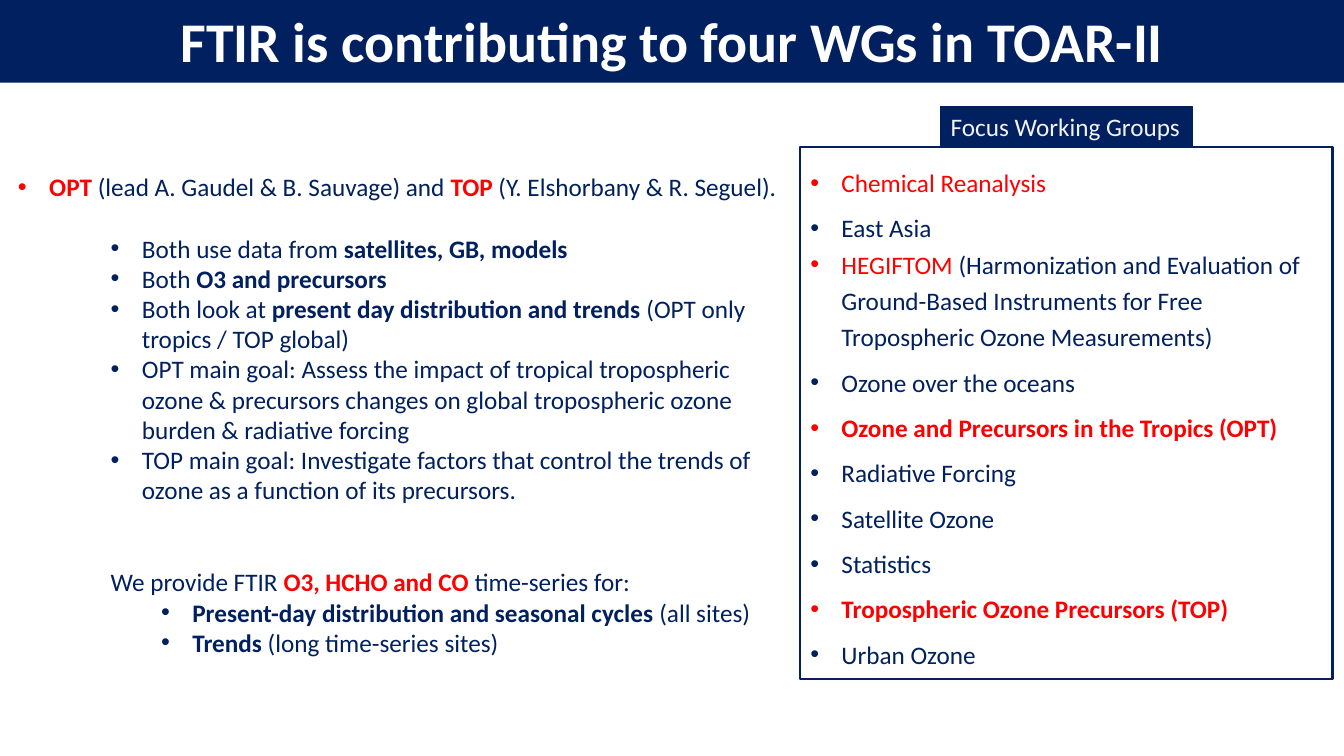
import pptx
import pptx.util
import pptx.dml.color
import pptx.enum.shapes
import pptx.enum.text
import lxml.etree

COLORS = {"navy": "002060", "red": "FF0000", "white": "FFFFFF", "pale": "F2F2F2"}
W, H = pptx.util.Inches(13.33), pptx.util.Inches(7.5)
LINE = 22  # height in points of one 18 pt text line

prs = pptx.Presentation()
prs.slide_width, prs.slide_height = W, H
s = prs.slides.add_slide(prs.slide_layouts[6])


def add_box(left, top, width, height, fill=None, line=0):
    """Add a rectangle placed in percent of the slide; line is in points."""
    sp = s.shapes.add_shape(
        pptx.enum.shapes.MSO_SHAPE.RECTANGLE,
        int(W * left / 100), int(H * top / 100),
        int(W * width / 100), int(H * height / 100))
    sp.shadow.inherit = False
    sp.fill.solid()
    sp.fill.fore_color.rgb = pptx.dml.color.RGBColor.from_string(COLORS[fill])
    if line:
        sp.line.color.rgb = pptx.dml.color.RGBColor.from_string(COLORS["navy"])
        sp.line.width = pptx.util.Pt(line)
    else:
        sp.line.fill.background()
    sp.text_frame.vertical_anchor = pptx.enum.text.MSO_ANCHOR.TOP
    return sp.text_frame


def add_par(tf, runs, size=18, indent=None, bullet=True, spacing=1.0, before=0):
    """Add a paragraph of (text, colour, bold) runs; indent is in inches."""
    p = tf.paragraphs[0] if not tf.paragraphs[0].runs else tf.add_paragraph()
    p.alignment = pptx.enum.text.PP_ALIGN.LEFT
    p.line_spacing = spacing
    p.space_before = pptx.util.Pt(before)
    if indent is not None:
        pPr = p._p.get_or_add_pPr()
        pPr.set("marL", str(pptx.util.Inches(indent)))
        pPr.set("indent", str(pptx.util.Inches(-0.31 if bullet else 0)))
        if bullet:
            ns = pptx.oxml.ns.qn
            lxml.etree.SubElement(pPr, ns("a:buFont")).set("typeface", "Arial")
            lxml.etree.SubElement(pPr, ns("a:buChar")).set("char", "•")
    for text, color, bold in runs:
        r = p.add_run()
        r.text = text
        r.font.name = "Calibri"
        r.font.size = pptx.util.Pt(size)
        r.font.bold = bold
        r.font.color.rgb = pptx.dml.color.RGBColor.from_string(COLORS[color])
    return p


# Title bar
tf = add_box(0, -0.4, 100, 11.33, "navy")
tf.vertical_anchor = pptx.enum.text.MSO_ANCHOR.MIDDLE
p = add_par(tf, [("FTIR is contributing to four WGs in TOAR-II", "white", True)], size=40)
p.alignment = pptx.enum.text.PP_ALIGN.CENTER

# Label on top of the working group panel
tf = add_box(70, 14.13, 18.75, 5.33, "navy", line=0.75)
tf.word_wrap = False
add_par(tf, [("Focus Working Groups", "pale", False)])

# Working group panel
tf = add_box(59.55, 19.47, 39.6, 70.4, "white", line=1.5)
tf.word_wrap = True
groups = [
    [("Chemical Reanalysis", "red", False)],
    [("East Asia", "navy", False)],
    [("HEGIFTOM ", "red", False),
     ("(Harmonization and Evaluation of Ground-Based Instruments for Free "
      "Tropospheric Ozone Measurements)", "navy", False)],
    [("Ozone over the oceans", "navy", False)],
    [("Ozone and Precursors in the Tropics (OPT)", "red", True)],
    [("Radiative Forcing", "navy", False)],
    [("Satellite Ozone", "navy", False)],
    [("Statistics", "navy", False)],
    [("Tropospheric Ozone Precursors (TOP)", "red", True)],
    [("Urban Ozone", "navy", False)],
]
for runs in groups:
    add_par(tf, runs, indent=0.31, spacing=1.2 if len(runs) > 1 else 1.5)

# Details on the left: indent, bullet, blank lines above, runs
tf = s.shapes.add_textbox(0, int(H * 0.2207), int(W * 0.59), int(H * 0.74)).text_frame
tf.word_wrap = True
details = [
    (0.39, True, 0, [("OPT", "red", True),
                     (" (lead A. Gaudel & B. Sauvage) and ", "navy", False),
                     ("TOP", "red", True),
                     (" (Y. Elshorbany & R. Seguel).", "navy", False)]),
    (1.31, True, 1, [("Both use data from ", "navy", False),
                     ("satellites, GB, models", "navy", True)]),
    (1.31, True, 0, [("Both ", "navy", False), ("O3 and precursors", "navy", True)]),
    (1.31, True, 0, [("Both look at ", "navy", False),
                     ("present day distribution and trends ", "navy", True),
                     ("(OPT only tropics / TOP global)", "navy", False)]),
    (1.31, True, 0, [("OPT main goal: Assess the impact of tropical tropospheric ozone "
                      "& precursors changes on global tropospheric ozone burden & "
                      "radiative forcing", "navy", False)]),
    (1.31, True, 0, [("TOP main goal: Investigate factors that control the trends of "
                      "ozone as a function of its precursors.", "navy", False)]),
    (1, False, 2, [("We provide FTIR ", "navy", False),
                   ("O3, HCHO and CO ", "red", True),
                   ("time-series for:", "navy", False)]),
    (1.81, True, 0, [("Present-day distribution and seasonal cycles ", "navy", True),
                     ("(all sites)", "navy", False)]),
    (1.81, True, 0, [("Trends ", "navy", True),
                     ("(long time-series sites)", "navy", False)]),
]
for indent, bullet, blank, runs in details:
    add_par(tf, runs, indent=indent, bullet=bullet, before=blank * LINE)

prs.save("out.pptx")
